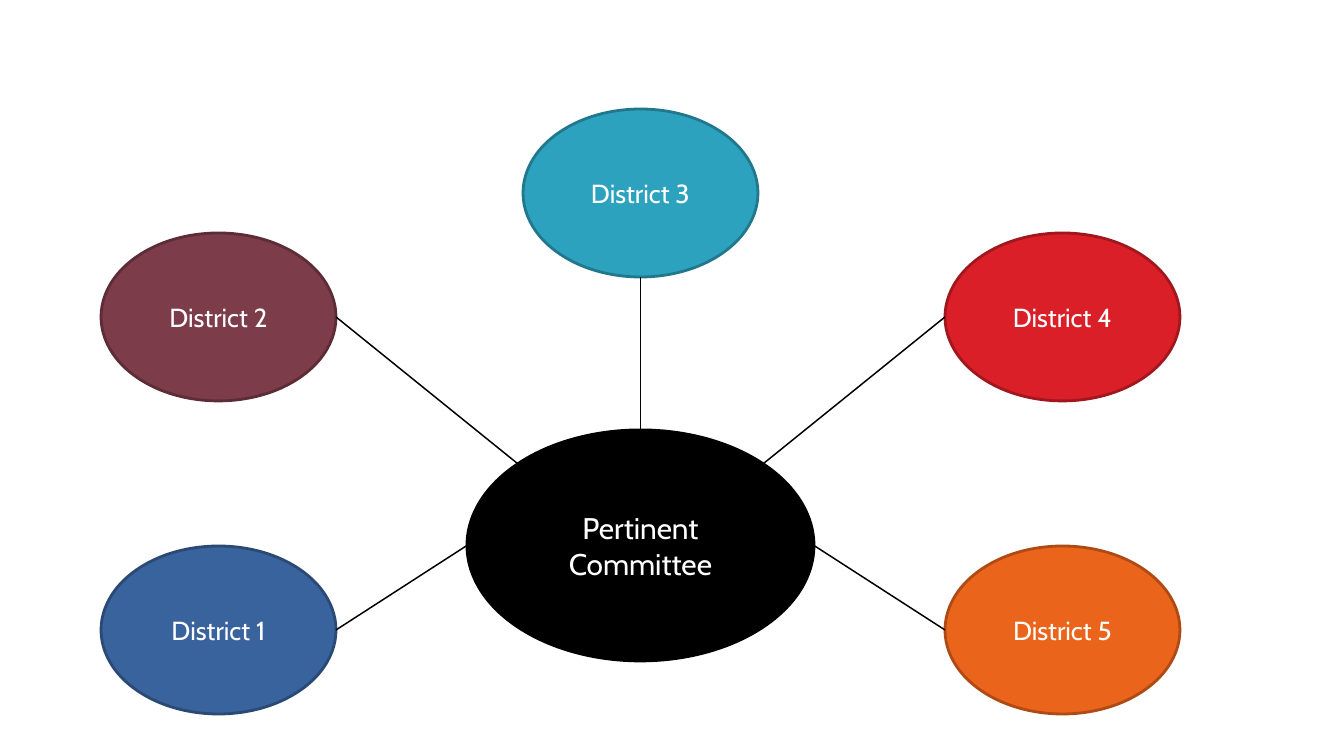
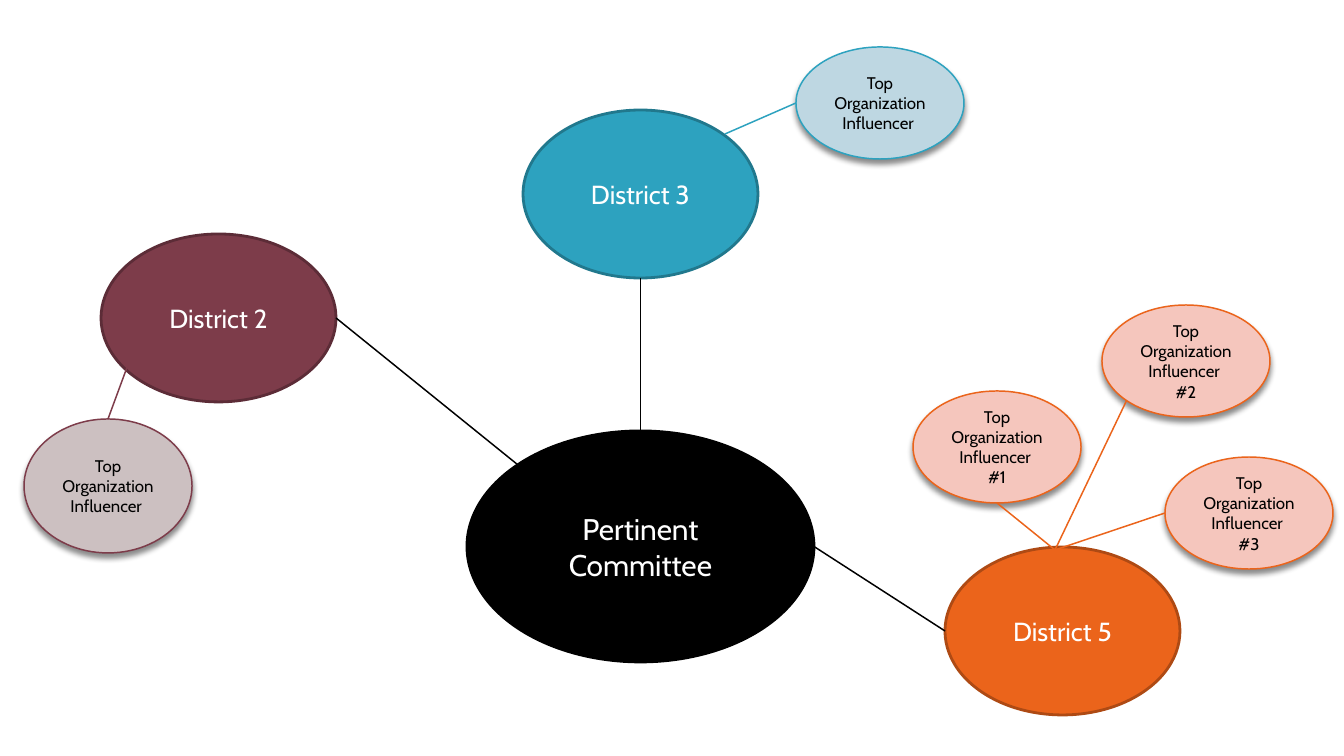
"""Build two network slides linking a committee, its districts and their influencers."""
from lxml.etree import SubElement
from pptx import Presentation
from pptx.dml.color import RGBColor
from pptx.enum.shapes import MSO_CONNECTOR as Link, MSO_SHAPE as Preset
from pptx.enum.text import MSO_ANCHOR, PP_ALIGN
from pptx.oxml.ns import qn
from pptx.util import Pt

PX = 914400 / 134.4
FONT = "Cabin"
THIN, THICK = Pt(0.79), Pt(1.5)

BLACK = RGBColor(0x00, 0x00, 0x00)
WHITE = RGBColor(0xFF, 0xFF, 0xFF)
BLUE, NAVY = RGBColor(0x39, 0x63, 0x9D), RGBColor(0x2A, 0x49, 0x74)
PLUM, DARK_PLUM = RGBColor(0x7D, 0x3C, 0x4A), RGBColor(0x5C, 0x2C, 0x37)
TEAL, DARK_TEAL = RGBColor(0x2D, 0xA2, 0xBF), RGBColor(0x21, 0x78, 0x8D)
RED, DARK_RED = RGBColor(0xDA, 0x1F, 0x28), RGBColor(0xA1, 0x17, 0x1E)
ORANGE, RUST = RGBColor(0xEB, 0x64, 0x1B), RGBColor(0xAE, 0x4A, 0x14)
PALE_PLUM = RGBColor(0xCC, 0xC0, 0xC1)
PALE_TEAL = RGBColor(0xBE, 0xD7, 0xE2)
PALE_ORANGE = RGBColor(0xF5, 0xC6, 0xBD)

COMMITTEE = "Pertinent Committee"
COMMITTEE_BOX = (467, 430, 347, 231)
DISTRICT_SIZE = (235, 168)
INFLUENCER = "Top Organization Influencer "

# name: left, top, fill, outline, side of the district, side of the committee
DISTRICTS = {
    "District 1": (101, 546, BLUE, NAVY, "right", "left"),
    "District 2": (101, 233, PLUM, DARK_PLUM, "right", "top left"),
    "District 3": (523, 109, TEAL, DARK_TEAL, "bottom", "top"),
    "District 4": (945, 233, RED, DARK_RED, "left", "top right"),
    "District 5": (945, 546, ORANGE, RUST, "left", "right"),
}
FAN = (1055, 550)
INFLUENCERS = [
    (INFLUENCER, (24, 419, 168, 134), PALE_PLUM, PLUM, "top", (136, 343)),
    (INFLUENCER, (796, 47, 168, 112), PALE_TEAL, TEAL, "left", (725, 134)),
    (INFLUENCER + "\n#1", (913, 391, 168, 112), PALE_ORANGE, ORANGE, "bottom", FAN),
    (INFLUENCER + "\n#2", (1102, 305, 168, 112), PALE_ORANGE, ORANGE, "bottom left", FAN),
    (INFLUENCER + "\n#3", (1165, 457, 168, 112), PALE_ORANGE, ORANGE, "left", FAN),
]
SLIDES = [
    (0, list(DISTRICTS), []),
    (1, ["District 2", "District 3", "District 5"], INFLUENCERS),
]


def emu(px):
    return round(px * PX)


def rim(oval, side):
    """Return the point of an oval's outline that lies on the named side."""
    across = ("right" in side) - ("left" in side)
    down = ("bottom" in side) - ("top" in side)
    reach = 0.5 ** 0.5 if across and down else 1
    return (round(oval.left + oval.width / 2 * (1 + across * reach)),
            round(oval.top + oval.height / 2 * (1 + down * reach)))


def add_oval(slide, text, box, fill, outline, weight, size, ink):
    oval = slide.shapes.add_shape(Preset.OVAL, *map(emu, box))
    oval.shadow.inherit = False
    oval.fill.solid()
    oval.fill.fore_color.rgb = fill
    oval.line.color.rgb = outline
    oval.line.width = weight
    frame = oval.text_frame
    frame.text = text
    frame.word_wrap = True
    frame.vertical_anchor = MSO_ANCHOR.MIDDLE
    for paragraph in frame.paragraphs:
        paragraph.alignment = PP_ALIGN.CENTER
        for run in paragraph.runs:
            run.font.name = FONT
            run.font.size = Pt(size)
            run.font.color.rgb = ink
    return oval


def add_soft_shadow(oval):
    effects = oval._element.spPr.find(qn("a:effectLst"))
    shadow = SubElement(effects, qn("a:outerShdw"), blurRad=str(Pt(3)),
                        dist=str(Pt(2.4)), dir="5400000", rotWithShape="0")
    tint = SubElement(shadow, qn("a:srgbClr"), val=str(BLACK))
    SubElement(tint, qn("a:alpha"), val="45000")


def add_link(slide, start, oval, side, color):
    link = slide.shapes.add_connector(Link.STRAIGHT, *start, *rim(oval, side))
    if side == "top":
        link.end_connect(oval, 0)
    link.line.color.rgb = color
    link.line.width = THIN
    SubElement(link._element.spPr, qn("a:effectLst"))


def add_network(deck, drop, names, influencers):
    slide = deck.slides.add_slide(deck.slide_layouts[6])
    left, top, width, height = COMMITTEE_BOX
    committee = add_oval(slide, COMMITTEE, (left, top + drop, width, height),
                         BLACK, BLACK, THICK, 16, WHITE)
    for name in names:
        left, top, fill, outline, near, far = DISTRICTS[name]
        district = add_oval(slide, name, (left, top + drop, *DISTRICT_SIZE),
                            fill, outline, THICK, 14, WHITE)
        add_link(slide, rim(district, near), committee, far, BLACK)
    for text, box, fill, color, side, start in influencers:
        influencer = add_oval(slide, text, box, fill, color, THIN, 9, BLACK)
        add_soft_shadow(influencer)
        add_link(slide, tuple(map(emu, start)), influencer, side, color)


def main():
    deck = Presentation()
    deck.slide_width, deck.slide_height = emu(1344), emu(756)
    for drop, names, influencers in SLIDES:
        add_network(deck, drop, names, influencers)
    deck.save("out.pptx")


if __name__ == "__main__":
    main()
